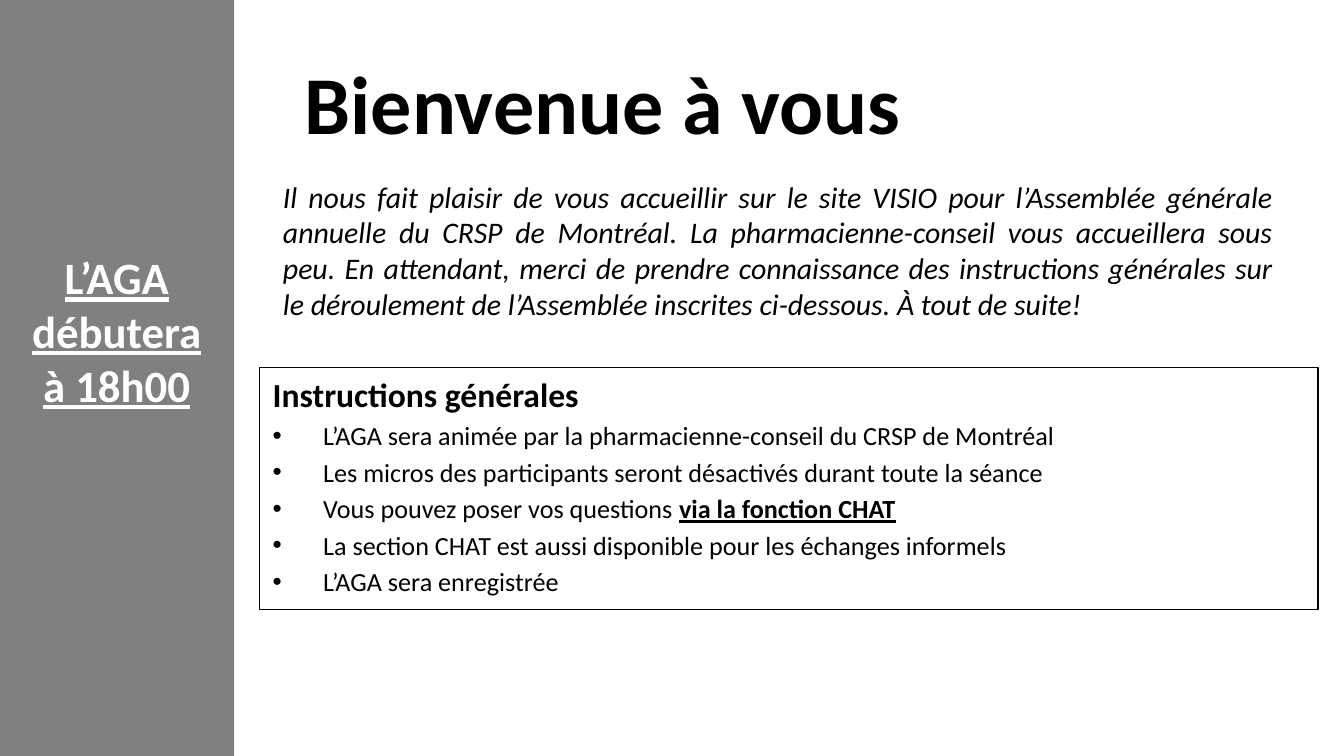
from dataclasses import dataclass

from lxml import etree
from pptx import Presentation
from pptx.dml.color import RGBColor
from pptx.enum.shapes import MSO_SHAPE
from pptx.enum.text import MSO_ANCHOR, MSO_AUTO_SIZE, PP_ALIGN
from pptx.oxml.ns import qn
from pptx.util import Pt

RECT = MSO_SHAPE.RECTANGLE
TOP, MIDDLE = MSO_ANCHOR.TOP, MSO_ANCHOR.MIDDLE
LEFT, CENTER, JUSTIFY = PP_ALIGN.LEFT, PP_ALIGN.CENTER, PP_ALIGN.JUSTIFY
NO_FIT = MSO_AUTO_SIZE.NONE


@dataclass(frozen=True)
class Theme:
    face: str = "Calibri"
    ink: RGBColor = RGBColor(0, 0, 0)
    paper: RGBColor = RGBColor(255, 255, 255)
    band: RGBColor = RGBColor(128, 128, 128)
    title: int = 44
    start: int = 24
    head: int = 18
    intro: int = 16
    item: int = 14


THEME = Theme()
WIDE, HIGH = 720, 405
INDENT = 27

INTRO = (
    "Il nous fait plaisir de vous accueillir sur le site VISIO pour l’Assemblée "
    "générale annuelle du CRSP de Montréal. La pharmacienne-conseil vous "
    "accueillera sous peu. En attendant, merci de prendre connaissance des "
    "instructions générales sur le déroulement de l’Assemblée inscrites "
    "ci-dessous. À tout de suite!"
)
STRONG = {"bold": True, "underline": True}
# Each item is a list of runs: text and its own format
ITEMS = [
    [("L’AGA sera animée par la pharmacienne-conseil du CRSP de Montréal", {})],
    [("Les micros des participants seront désactivés durant toute la séance", {})],
    [("Vous pouvez poser vos questions ", {}), ("via la fonction CHAT", STRONG)],
    [("La section CHAT est aussi disponible pour les échanges informels", {})],
    [("L’AGA sera enregistrée", {})],
]


def style(font, size, color=THEME.ink, **more):
    look = {"name": THEME.face, "size": Pt(size), **more}
    for key, value in look.items():
        setattr(font, key, value)
    font.color.rgb = color


def write(para, text, size, align, **look):
    para.alignment = align
    run = para.add_run()
    run.text = text
    style(run.font, size, **look)


def place(shape, x, y, w, h):
    spot = {"left": x, "top": y, "width": w, "height": h}
    for key, value in spot.items():
        setattr(shape, key, Pt(value))


def frame(shape, anchor=TOP):
    body = shape.text_frame
    look = {"word_wrap": True, "auto_size": NO_FIT, "vertical_anchor": anchor}
    for key, value in look.items():
        setattr(body, key, value)
    return body


def add_text(slide, area, text, size, align, **look):
    box = slide.shapes.add_textbox(*map(Pt, area))
    write(frame(box).paragraphs[0], text, size, align, **look)


def add_rect(slide, area, fill=None, line=None):
    rect = slide.shapes.add_shape(RECT, *map(Pt, area))
    rect.shadow.inherit = False
    if fill is None:
        rect.fill.background()
    else:
        rect.fill.solid()
        rect.fill.fore_color.rgb = fill
    if line is None:
        rect.line.fill.background()
    else:
        rect.line.color.rgb = line
        rect.line.width = Pt(0.75)
    return rect


def add_item(body, runs):
    para = body.add_paragraph()
    props = para._p.get_or_add_pPr()
    props.set("marL", str(Pt(INDENT)))
    props.set("indent", str(-Pt(INDENT)))
    para.space_before = Pt(THEME.item * 0.2)
    font = etree.SubElement(props, qn("a:buFont"))
    font.set("typeface", "Arial")
    etree.SubElement(props, qn("a:buChar")).set("char", "•")
    for text, look in runs:
        write(para, text, THEME.item, JUSTIFY, **look)


def main():
    deck = Presentation()
    deck.slide_width, deck.slide_height = Pt(WIDE), Pt(HIGH)
    slide = deck.slides.add_slide(deck.slide_layouts[5])

    # Title
    title = slide.shapes.title
    place(title, 156, 15, 429, 79)
    head = frame(title, MIDDLE).paragraphs[0]
    write(head, "Bienvenue à vous", THEME.title, LEFT, bold=True)

    # Welcome text
    add_text(slide, (144.5, 92, 544.5, 86), INTRO, THEME.intro, JUSTIFY, italic=True)

    # Side band with the start time
    add_rect(slide, (0, 0, 125.5, HIGH), fill=THEME.band)
    add_text(slide, (6, 130.5, 113, 94), "L’AGA débutera à 18h00", THEME.start,
             CENTER, color=THEME.paper, **STRONG)

    # Framed instructions
    box = add_rect(slide, (139, 196.75, 567, 130), line=THEME.ink)
    body = frame(box)
    write(body.paragraphs[0], "Instructions générales", THEME.head, JUSTIFY, bold=True)
    for runs in ITEMS:
        add_item(body, runs)

    deck.save("out.pptx")


if __name__ == "__main__":
    main()
